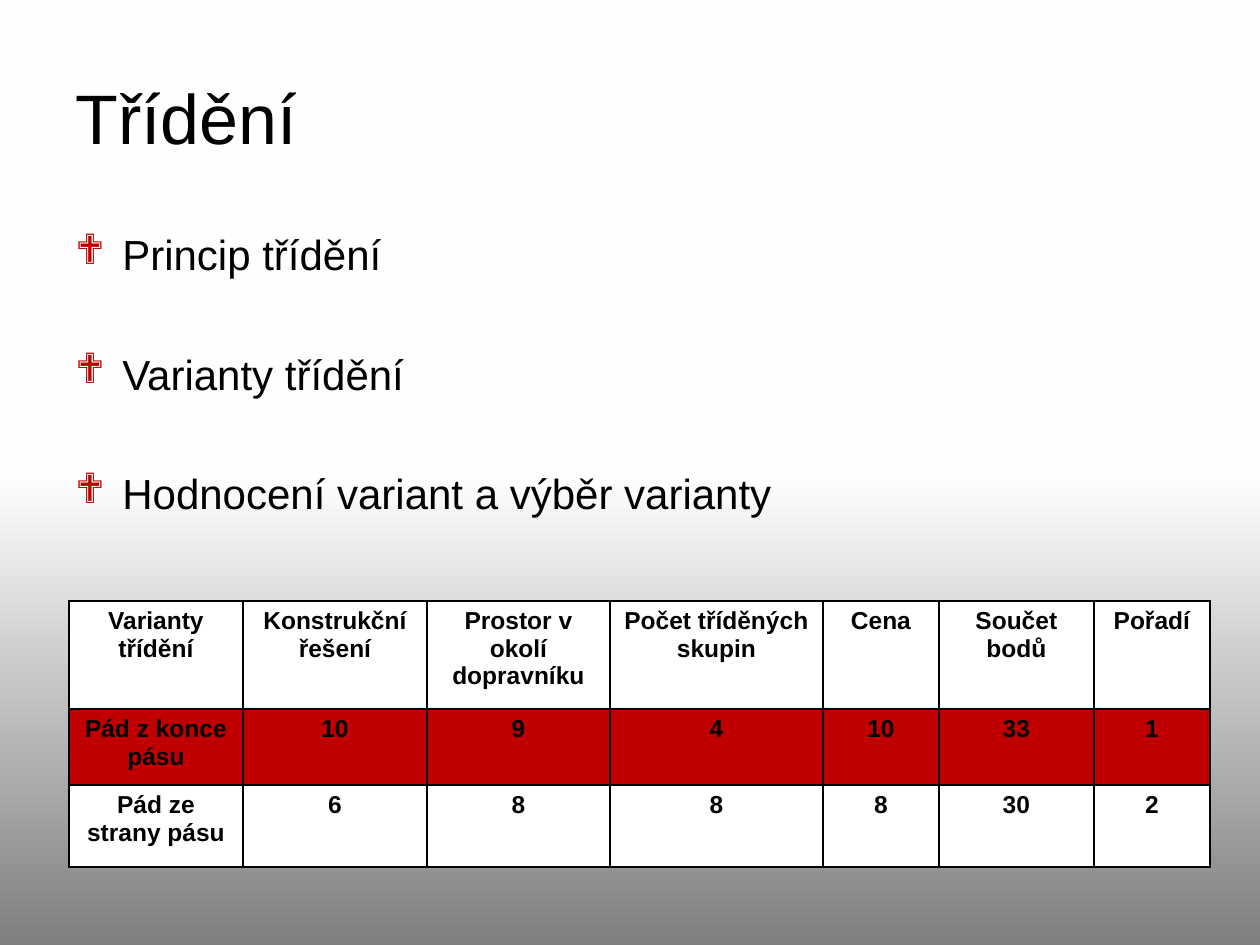
"""Build the slide on sorting variants with its scoring table."""
from copy import deepcopy

from lxml.etree import SubElement as Sub
from pptx import Presentation
from pptx.dml.color import RGBColor as RGB
from pptx.enum.text import MSO_ANCHOR as ANCHOR, PP_ALIGN as ALIGN
from pptx.oxml.ns import qn
from pptx.util import Emu, Pt

SCALE = 914400 / 126
BLACK = RGB(0, 0, 0)
WHITE = RGB(255, 255, 255)
RED = RGB(192, 0, 0)
PALE = RGB(254, 254, 254)
GREY = RGB(127, 127, 127)
FONT = "Arial"
STOPS = [(0.4, PALE), (0.5, WHITE), (1, GREY)]
POINTS = ["Princip třídění", "Varianty třídění", "Hodnocení variant a výběr varianty"]
COLS = [174, 184, 183, 213, 116, 155, 116]
ROWS = [108, 76, 82]
FILLS = [WHITE, RED, WHITE]
CELLS = [
    ["Varianty třídění", "Konstrukční řešení", "Prostor v okolí dopravníku",
     "Počet tříděných skupin", "Cena", "Součet bodů", "Pořadí"],
    ["Pád z konce pásu", "10", "9", "4", "10", "33", "1"],
    ["Pád ze strany pásu", "6", "8", "8", "8", "30", "2"],
]


def px(n):
    return Emu(round(n * SCALE))


def write(para, text, size, bold=False):
    run = para.add_run()
    run.text = text
    font = run.font
    font.name, font.size, font.bold = FONT, Pt(size), bold
    font.color.rgb = BLACK


deck = Presentation()
deck.slide_width, deck.slide_height = px(1260), px(945)
slide = deck.slides.add_slide(deck.slide_layouts[6])

back = slide.background.fill
back.gradient()
back.gradient_angle = 270
stops = slide.element.find(".//" + qn("a:gsLst"))
stops.append(deepcopy(stops[-1]))
for stop, (place, tone) in zip(back.gradient_stops, STOPS):
    stop.position = place
    stop.color.rgb = tone

title = slide.shapes.add_textbox(px(63), px(38), px(1134), px(157)).text_frame
title.word_wrap = True
title.vertical_anchor = ANCHOR.MIDDLE
write(title.paragraphs[0], "Třídění", 40)

body = slide.shapes.add_textbox(px(63), px(221), px(1134), px(389)).text_frame
body.word_wrap = True
body.margin_top = px(8)
for i, text in enumerate(POINTS):
    para = body.add_paragraph() if i else body.paragraphs[0]
    props = para._p.get_or_add_pPr()
    props.set("marL", str(px(47)))
    props.set("indent", str(-px(47)))
    tint = Sub(props, qn("a:buClr"))
    Sub(tint, qn("a:srgbClr"), val=str(RED))
    Sub(props, qn("a:buFont"), typeface="Wingdings")
    Sub(props, qn("a:buChar"), char="❖")
    if i:
        para.space_before = Pt(39.5)
    write(para, text, 24)

table = slide.shapes.add_table(
    len(ROWS), len(COLS), px(69), px(601), px(sum(COLS)), px(sum(ROWS))).table
table.first_row = table.horz_banding = False
for col, width in zip(table.columns, COLS):
    col.width = px(width)
for row, height, fill, texts in zip(table.rows, ROWS, FILLS, CELLS):
    row.height = px(height)
    for cell, text in zip(row.cells, texts):
        props = cell._tc.get_or_add_tcPr()
        for side in ("lnL", "lnR", "lnT", "lnB"):
            line = Sub(props, qn("a:" + side), w=str(Pt(1)))
            paint = Sub(line, qn("a:solidFill"))
            Sub(paint, qn("a:srgbClr"), val=str(BLACK))
        cell.fill.solid()
        cell.fill.fore_color.rgb = fill
        para = cell.text_frame.paragraphs[0]
        para.alignment = ALIGN.CENTER
        write(para, text, 14, True)

deck.save("out.pptx")
